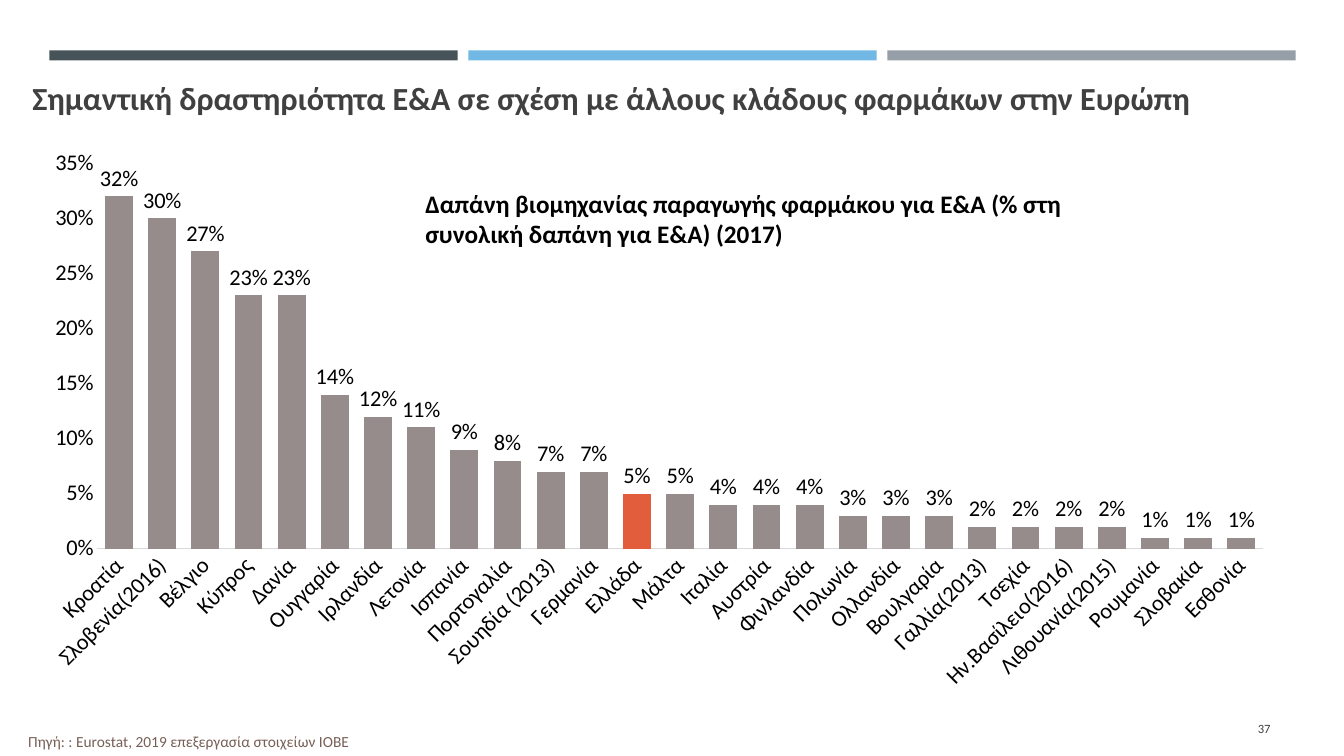
from dataclasses import dataclass

import pptx
import pptx.chart.data
import pptx.dml.color
import pptx.enum.chart
import pptx.enum.shapes
import pptx.enum.text
import pptx.oxml
import pptx.util
from pptx.util import Inches

ALIGN = pptx.enum.text.PP_ALIGN
ANCHOR = pptx.enum.text.MSO_ANCHOR
FIT = pptx.enum.text.MSO_AUTO_SIZE


@dataclass(frozen=True)
class Theme:
    font: str = "Calibri"
    bands: tuple = ("465359", "71B9E4", "969FA7")
    dark: str = "404040"
    brown: str = "775F55"
    black: str = "000000"
    bar: str = "968C8C"
    accent: str = "E25D3C"
    axis: str = "D9D9D9"
    title: int = 23
    head: int = 18
    chart: int = 16
    source: int = 11
    number: int = 9


THEME = Theme()

SHARES = {
    "Κροατία": 0.32, "Σλοβενία(2016)": 0.30, "Βέλγιο": 0.27,
    "Κύπρος": 0.23, "Δανία": 0.23, "Ουγγαρία": 0.14,
    "Ιρλανδία": 0.12, "Λετονία": 0.11, "Ισπανία": 0.09,
    "Πορτογαλία": 0.08, "Σουηδία (2013)": 0.07, "Γερμανία": 0.07,
    "Ελλάδα": 0.05, "Μάλτα": 0.05, "Ιταλία": 0.04,
    "Αυστρία": 0.04, "Φινλανδία": 0.04, "Πολωνία": 0.03,
    "Ολλανδία": 0.03, "Βουλγαρία": 0.03, "Γαλλία(2013)": 0.02,
    "Τσεχία": 0.02, "Ην.Βασίλειο(2016)": 0.02, "Λιθουανία(2015)": 0.02,
    "Ρουμανία": 0.01, "Σλοβακία": 0.01, "Εσθονία": 0.01,
}


def rgb(code):
    return pptx.dml.color.RGBColor.from_string(code)


def style(font, size, color, bold=False):
    font.name = THEME.font
    font.size = pptx.util.Pt(size)
    font.bold = bold
    font.color.rgb = rgb(color)


def paint(form, color):
    form.fill.solid()
    form.fill.fore_color.rgb = rgb(color)


def add_bands(slide):
    for i, color in enumerate(THEME.bands):
        band = slide.shapes.add_shape(
            pptx.enum.shapes.MSO_SHAPE.RECTANGLE,
            Inches(0.49 + i * 4.155), Inches(0.5), Inches(4.05), Inches(0.1))
        band.shadow.inherit = False
        paint(band, color)
        band.line.fill.background()


def write(shape, text, size, color, bold=False, align=ALIGN.LEFT,
          anchor=ANCHOR.TOP):
    """Fill a shape with one paragraph and return that paragraph."""
    frame = shape.text_frame
    frame.word_wrap = True
    frame.auto_size = FIT.NONE
    frame.vertical_anchor = anchor
    para = frame.paragraphs[0]
    para.text = text
    para.alignment = align
    style(para.font, size, color, bold)
    return para


def add_title(slide, text):
    title = slide.shapes.title
    title.left, title.top = Inches(0.22), Inches(0.68)
    title.width, title.height = Inches(12.97), Inches(0.53)
    write(title, text, THEME.title, THEME.dark, True, anchor=ANCHOR.BOTTOM)


def add_text(slide, box, *args, **kind):
    shape = slide.shapes.add_textbox(*map(Inches, box))
    return write(shape, *args, **kind)


def place_plot(chart, x, y, w, h):
    """Fix the inner plot area, in fractions of the chart."""
    area = chart._chartSpace.chart.plotArea
    for old in area.xpath("c:layout"):
        area.remove(old)
    space = "http://schemas.openxmlformats.org/drawingml/2006/chart"
    area.insert(0, pptx.oxml.parse_xml(
        f'<c:layout xmlns:c="{space}"><c:manualLayout>'
        '<c:layoutTarget val="inner"/>'
        '<c:xMode val="edge"/><c:yMode val="edge"/>'
        f'<c:x val="{x}"/><c:y val="{y}"/><c:w val="{w}"/><c:h val="{h}"/>'
        '</c:manualLayout></c:layout>'))


def set_axes(chart):
    none = pptx.enum.chart.XL_TICK_MARK.NONE
    names, scale = chart.category_axis, chart.value_axis
    for axis in (names, scale):
        axis.major_tick_mark = axis.minor_tick_mark = none
        axis.has_major_gridlines = False
        style(axis.tick_labels.font, THEME.chart, THEME.black)
    names.format.line.color.rgb = rgb(THEME.axis)
    names.format.line.width = pptx.util.Pt(0.75)
    slant = names._element.txPr.bodyPr
    slant.set("rot", "-2700000")
    slant.set("vert", "horz")
    scale.format.line.fill.background()
    scale.minimum_scale, scale.maximum_scale = 0, 0.35
    scale.major_unit = 0.05
    scale.tick_labels.number_format = "0%"
    scale.tick_labels.number_format_is_linked = False


def add_bars(slide, box, shares, focus):
    """Draw the shares as columns, with one country in the accent colour."""
    data = pptx.chart.data.CategoryChartData(number_format="0%")
    data.categories = list(shares)
    data.add_series("Ε&Α", list(shares.values()))
    chart = slide.shapes.add_chart(
        pptx.enum.chart.XL_CHART_TYPE.COLUMN_CLUSTERED,
        *map(Inches, box), data).chart
    chart.has_legend = chart.has_title = False
    style(chart.font, THEME.chart, THEME.black)
    set_axes(chart)
    place_plot(chart, 0.056, 0.045, 0.93, 0.685)

    plot = chart.plots[0]
    plot.gap_width, plot.overlap = 55, 100
    plot.vary_by_categories = False
    bars = plot.series[0]
    bars.invert_if_negative = False
    paint(bars.format, THEME.bar)
    paint(bars.points[list(shares).index(focus)].format, THEME.accent)

    plot.has_data_labels = True
    labels = plot.data_labels
    labels.show_value = True
    labels.number_format = "0%"
    labels.number_format_is_linked = False
    labels.position = pptx.enum.chart.XL_LABEL_POSITION.OUTSIDE_END
    style(labels.font, THEME.chart, THEME.black)


def main():
    deck = pptx.Presentation()
    deck.slide_width, deck.slide_height = Inches(13.33), Inches(7.5)
    slide = deck.slides.add_slide(deck.slide_layouts.get_by_name("Title Only"))
    add_bands(slide)
    add_title(slide, "Σημαντική δραστηριότητα Ε&Α σε σχέση με άλλους κλάδους "
                     "φαρμάκων στην Ευρώπη")
    add_text(slide, (11.55, 7.03, 1.15, 0.4), "37", THEME.number, THEME.dark,
             align=ALIGN.RIGHT, anchor=ANCHOR.MIDDLE)
    source = add_text(slide, (0.18, 7.2, 9.31, 0.3),
                      "Πηγή: : Eurostat, 2019 επεξεργασία στοιχείων ΙΟΒΕ",
                      THEME.source, THEME.brown, align=ALIGN.JUSTIFY)
    source.line_spacing = 1.07
    source.space_after = pptx.util.Pt(8)
    add_bars(slide, (0.27, 1.37, 12.43, 5.58), SHARES, "Ελλάδα")
    add_text(slide, (4.12, 1.82, 6.67, 0.71),
             "Δαπάνη βιομηχανίας παραγωγής φαρμάκου για Ε&Α (% στη συνολική "
             "δαπάνη για Ε&Α) (2017)", THEME.head, THEME.black, True)
    deck.save("out.pptx")


if __name__ == "__main__":
    main()
